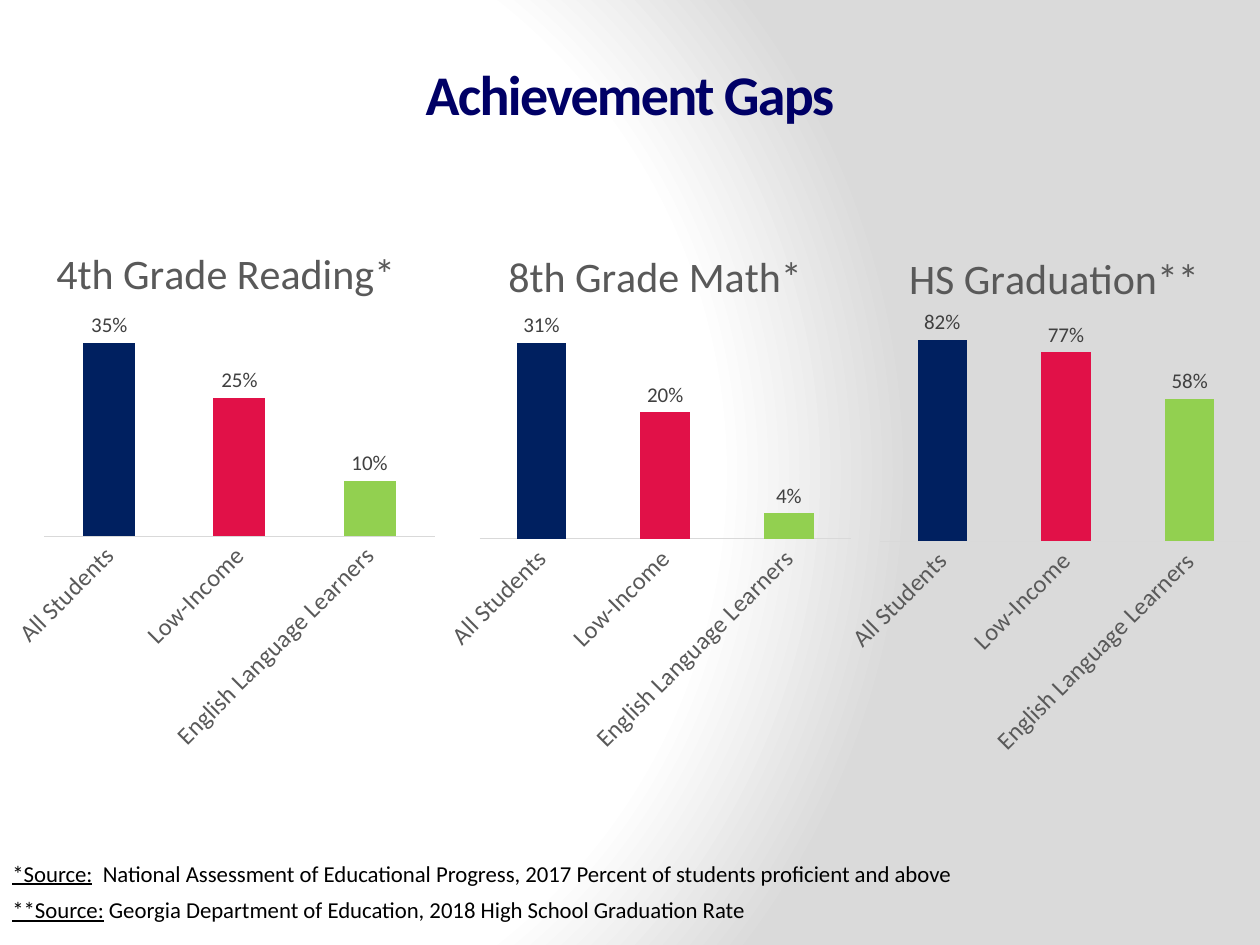
"""Build the Achievement Gaps slide with three column charts."""
from lxml import etree
from pptx import Presentation
from pptx import util as u
from pptx.chart.data import CategoryChartData
from pptx.dml.color import RGBColor
from pptx.enum import chart as charts, text
from pptx.oxml import parse_xml
from pptx.oxml.ns import nsdecls, qn

FONT = "Calibri"
WHITE = RGBColor(0xFF, 0xFF, 0xFF)
SILVER = RGBColor(0xDA, 0xDA, 0xDA)
BLACK = RGBColor(0, 0, 0)
TITLE_BLUE = RGBColor(0x00, 0x00, 0x66)
AXIS_TEXT = RGBColor(0x59, 0x59, 0x59)
LABEL_TEXT = RGBColor(0x40, 0x40, 0x40)
AXIS_LINE = RGBColor(0xD9, 0xD9, 0xD9)
NAVY = RGBColor(0x00, 0x20, 0x60)
RED = RGBColor(0xE1, 0x11, 0x48)
GREEN = RGBColor(0x92, 0xD0, 0x50)

GROUPS = ("All Students", "Low-Income", "English Language Learners")
COLORS = (NAVY, RED, GREEN)
GAPS = (
    ("4th Grade Reading*", (0.35, 0.25, 0.1), 0.4, (0, 120, 253.5, 316), 0.11),
    ("8th Grade Math*", (0.31, 0.2, 0.04), 0.35, (250, 121.5, 241, 316), 0.15),
    ("HS Graduation**", (0.82, 0.77, 0.58), 0.9, (479, 123, 241, 316), 0.15),
)
SOURCES = (
    ("*Source:", "  National Assessment of Educational Progress, 2017 "
                 "Percent of students proficient and above", 493),
    ("**Source:", " Georgia Department of Education, 2018 High School Graduation Rate", 514),
)


class SlideBuilder:
    """Hold the style and the current slide."""

    def __init__(self, slide, font):
        self.slide = slide
        self.font = font

    def style(self, font, size, color, bold=False):
        font.name, font.size, font.bold = self.font, u.Pt(size), bold
        font.color.rgb = color

    def background(self, stops):
        properties = self.slide.background.fill
        properties.gradient()
        gradient = self.slide.background._cSld.find(".//" + qn("a:gradFill"))
        stop_xml = "".join(
            f'<a:gs pos="{position * 1000}"><a:srgbClr val="{color}"/></a:gs>'
            for position, color in stops)
        gradient.getparent().replace(gradient, parse_xml(
            f'<a:gradFill {nsdecls("a")} rotWithShape="1"><a:gsLst>{stop_xml}</a:gsLst>'
            '<a:path path="circle"><a:fillToRect l="20000" t="50000" r="100000" b="50000"/>'
            '</a:path></a:gradFill>'))

    def text_box(self, left, top, width, height):
        shape = self.slide.shapes.add_textbox(*map(u.Pt, (left, top, width, height)))
        shape.text_frame.word_wrap = True
        return shape.text_frame

    def title(self, wording):
        frame = self.text_box(0, 30, 720, 46)
        frame.text = wording
        frame.vertical_anchor = text.MSO_ANCHOR.MIDDLE
        paragraph = frame.paragraphs[0]
        paragraph.alignment = text.PP_ALIGN.CENTER
        run = paragraph.runs[0]
        self.style(run.font, 32, TITLE_BLUE, True)
        run.font._element.set("spc", "-100")

    def source(self, label, wording, top):
        frame = self.text_box(0, top, 630, 18)
        frame.auto_size = text.MSO_AUTO_SIZE.SHAPE_TO_FIT_TEXT
        paragraph = frame.paragraphs[0]
        paragraph.line_spacing = 0.6
        paragraph.space_before = u.Pt(6.5)
        for part, underlined in ((label, True), (wording, False)):
            run = paragraph.add_run()
            run.text = part
            self.style(run.font, 13, BLACK)
            run.font.underline = underlined

    def layout(self, element, x, y, size=None, inner=False):
        layout = element.find(qn("c:layout"))
        if layout is None:
            layout = etree.Element(qn("c:layout"))
            has_text = element.find(qn("c:tx")) is not None
            element.insert(1 if has_text else 0, layout)
        manual = etree.SubElement(layout, qn("c:manualLayout"))
        values = [("layoutTarget", "inner")] if inner else []
        values += [("xMode", "edge"), ("yMode", "edge"), ("x", x), ("y", y)]
        values += zip(("w", "h"), size or ())
        for name, value in values:
            etree.SubElement(manual, qn(f"c:{name}")).set("val", str(value))

    def column_chart(self, heading, values, maximum, box, title_x):
        data = CategoryChartData(number_format="0%")
        data.categories = GROUPS
        data.add_series("Series 1", values)
        chart = self.slide.shapes.add_chart(
            charts.XL_CHART_TYPE.COLUMN_CLUSTERED, *map(u.Pt, box), data).chart
        self.style(chart.font, 10, BLACK)
        chart.has_legend = False
        chart.has_title = True
        frame = chart.chart_title.text_frame
        frame.text = heading
        self.style(frame.paragraphs[0].runs[0].font, 24, AXIS_TEXT)
        self.layout(chart.chart_title._element, title_x, 0.05)
        plot_area = chart._chartSpace.chart.plotArea
        self.layout(plot_area, 0.1, 0.19, (0.88, 0.4), inner=True)

        axis = chart.category_axis
        axis.major_tick_mark = charts.XL_TICK_MARK.NONE
        axis.format.line.color.rgb = AXIS_LINE
        axis.format.line.width = u.Pt(0.75)
        self.style(axis.tick_labels.font, 14, AXIS_TEXT)
        axis._element.find(qn("c:txPr")).find(qn("a:bodyPr")).set("rot", "-2700000")
        scale = chart.value_axis
        scale.minimum_scale, scale.maximum_scale = 0, maximum
        scale.has_major_gridlines = False
        scale.visible = False

        plot = chart.plots[0]
        plot.gap_width, plot.overlap, plot.vary_by_categories = 150, -25, False
        series = plot.series[0]
        series.format.fill.solid()
        series.format.fill.fore_color.rgb = NAVY
        for index, color in enumerate(COLORS):
            fill = series.points[index].format.fill
            fill.solid()
            fill.fore_color.rgb = color
        labels = series.data_labels
        labels.show_value = True
        labels.number_format, labels.number_format_is_linked = "0%", False
        labels.position = charts.XL_LABEL_POSITION.OUTSIDE_END
        self.style(labels.font, 12, LABEL_TEXT)


def main():
    presentation = Presentation()
    presentation.slide_width, presentation.slide_height = u.Pt(720), u.Pt(540)
    slide = presentation.slides.add_slide(presentation.slide_layouts[6])
    builder = SlideBuilder(slide, FONT)
    builder.background(((0, WHITE), (75, WHITE), (100, SILVER)))
    builder.title("Achievement Gaps")
    for source in SOURCES:
        builder.source(*source)
    for gap in GAPS:
        builder.column_chart(*gap)
    presentation.save("out.pptx")


if __name__ == "__main__":
    main()
